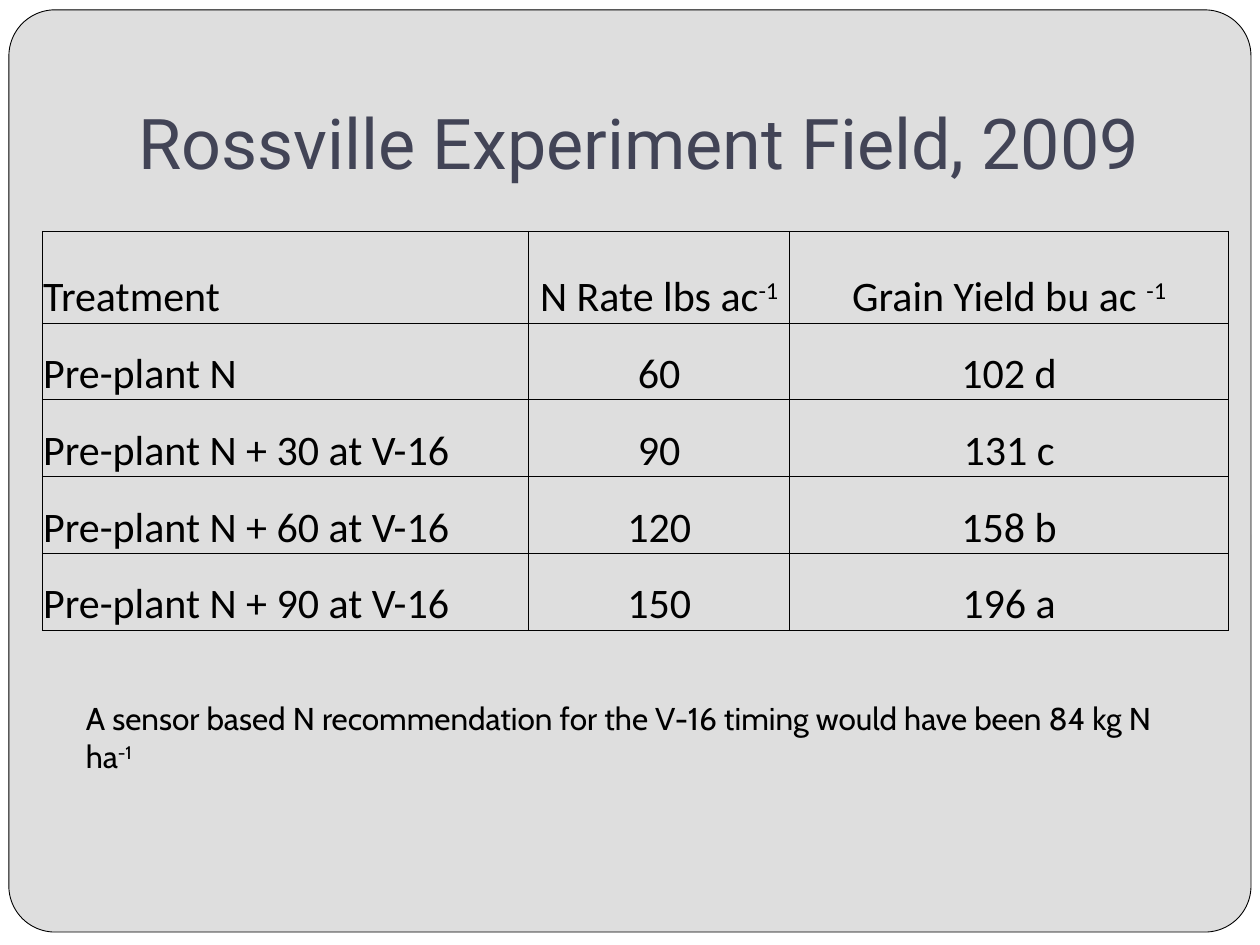
from lxml import etree
from pptx import Presentation
from pptx.dml.color import RGBColor
from pptx.enum.shapes import MSO_SHAPE as SHAPE
from pptx.enum.text import MSO_ANCHOR as ANCHOR, MSO_AUTO_SIZE as AUTO, PP_ALIGN as ALIGN
from pptx.oxml.ns import qn
from pptx.util import Cm, Pt

COLORS = {"page": "FFFFFF", "panel": "DEDEDE", "title": "424456", "ink": "000000"}

# Each cell is its text and, where needed, a superscript
ROWS = [
    [("Treatment",), ("N Rate lbs ac", "-1"), ("Grain Yield bu ac ", "-1")],
    [("Pre-plant N",), ("60",), ("102 d",)],
    [("Pre-plant N + 30 at V-16",), ("90",), ("131 c",)],
    [("Pre-plant N + 60 at V-16",), ("120",), ("158 b",)],
    [("Pre-plant N + 90 at V-16",), ("150",), ("196 a",)],
]
COL_SHARES = [0.41, 0.22, 0.37]
HEADER_SHARE = 0.23


def rgb(name):
    return RGBColor.from_string(COLORS[name])


def write(p, parts, font, size, color="ink"):
    """Fill a paragraph with text and an optional superscript."""
    for i, text in enumerate(parts):
        r = p.add_run()
        r.text = text
        r.font.name, r.font.size = font, Pt(size)
        r.font.color.rgb = rgb(color)
        if i:
            r.font._element.set("baseline", "30000")


def set_margins(obj, left, top, right, bottom):
    obj.margin_left, obj.margin_top = Cm(left), Cm(top)
    obj.margin_right, obj.margin_bottom = Cm(right), Cm(bottom)


def add_borders(cell, width=0.5):
    tcPr = cell._tc.get_or_add_tcPr()
    for i, side in enumerate(("lnL", "lnR", "lnT", "lnB")):
        ln = etree.Element(qn(f"a:{side}"), w=str(Pt(width)))
        fill = etree.SubElement(ln, qn("a:solidFill"))
        etree.SubElement(fill, qn("a:srgbClr"), val=COLORS["ink"])
        tcPr.insert(i, ln)


def add_backdrop(s, x, y, w, h):
    """Place a white page and a rounded panel behind the title."""
    s.background.fill.solid()
    s.background.fill.fore_color.rgb = rgb("panel")
    page = s.shapes.add_shape(SHAPE.RECTANGLE, Cm(x), Cm(y), Cm(w), Cm(h))
    panel = s.shapes.add_shape(SHAPE.ROUNDED_RECTANGLE, Cm(x + 0.18), Cm(y + 0.2),
                               Cm(w - 0.36), Cm(h - 0.46))
    panel.adjustments[0] = 0.05
    for i, (sp, color) in enumerate([(page, "page"), (panel, "panel")]):
        sp.shadow.inherit = False
        sp.fill.solid()
        sp.fill.fore_color.rgb = rgb(color)
        sp.element.getparent().insert(2 + i, sp.element)
    page.line.fill.background()
    panel.line.color.rgb = rgb("ink")
    panel.line.width = Pt(0.5)


def set_title(s, x, y, w, h):
    sp = s.shapes.title
    sp.left, sp.top, sp.width, sp.height = Cm(x), Cm(y), Cm(w), Cm(h)
    tf = sp.text_frame
    tf.word_wrap, tf.auto_size = True, AUTO.NONE
    tf.vertical_anchor = ANCHOR.BOTTOM
    set_margins(tf, 0.25, 0.13, 0.25, 0.25)
    p = tf.paragraphs[0]
    p.alignment = ALIGN.LEFT
    write(p, ["Rossville Experiment Field, 2009"], "Roboto", 40, "title")


def add_yield_table(s, x, y, w, h):
    table = s.shapes.add_table(len(ROWS), len(COL_SHARES), Cm(x), Cm(y), Cm(w), Cm(h)).table
    table.first_row = table.horz_banding = False
    for col, share in zip(table.columns, COL_SHARES):
        col.width = Cm(w * share)
    body_share = (1 - HEADER_SHARE) / (len(ROWS) - 1)
    for i, row in enumerate(ROWS):
        table.rows[i].height = Cm(h * (body_share if i else HEADER_SHARE))
        for j, parts in enumerate(row):
            cell = table.cell(i, j)
            cell.fill.background()
            add_borders(cell)
            cell.vertical_anchor = ANCHOR.BOTTOM
            set_margins(cell, 0.02, 0.02, 0.02, 0)
            p = cell.text_frame.paragraphs[0]
            p.alignment = ALIGN.CENTER if j else ALIGN.LEFT
            write(p, parts, "Calibri", 24)


def add_note(s, x, y, w, h):
    tf = s.shapes.add_textbox(Cm(x), Cm(y), Cm(w), Cm(h)).text_frame
    tf.word_wrap, tf.auto_size = True, AUTO.SHAPE_TO_FIT_TEXT
    write(tf.paragraphs[0],
          ["A sensor based N recommendation for the V-16 timing would have been 84 kg N ha", "-1"],
          "Cabin", 18)


def main():
    prs = Presentation()
    prs.slide_width, prs.slide_height = Cm(25.4), Cm(19.05)
    s = prs.slides.add_slide(prs.slide_layouts[5])
    add_backdrop(s, 0, 0, 25.4, 19.05)
    set_title(s, 2.54, 0.76, 21.59, 3.18)
    add_yield_table(s, 0.85, 4.66, 23.92, 8.05)
    add_note(s, 1.48, 13.97, 22.43, 1.02)
    prs.save("out.pptx")


if __name__ == "__main__":
    main()
